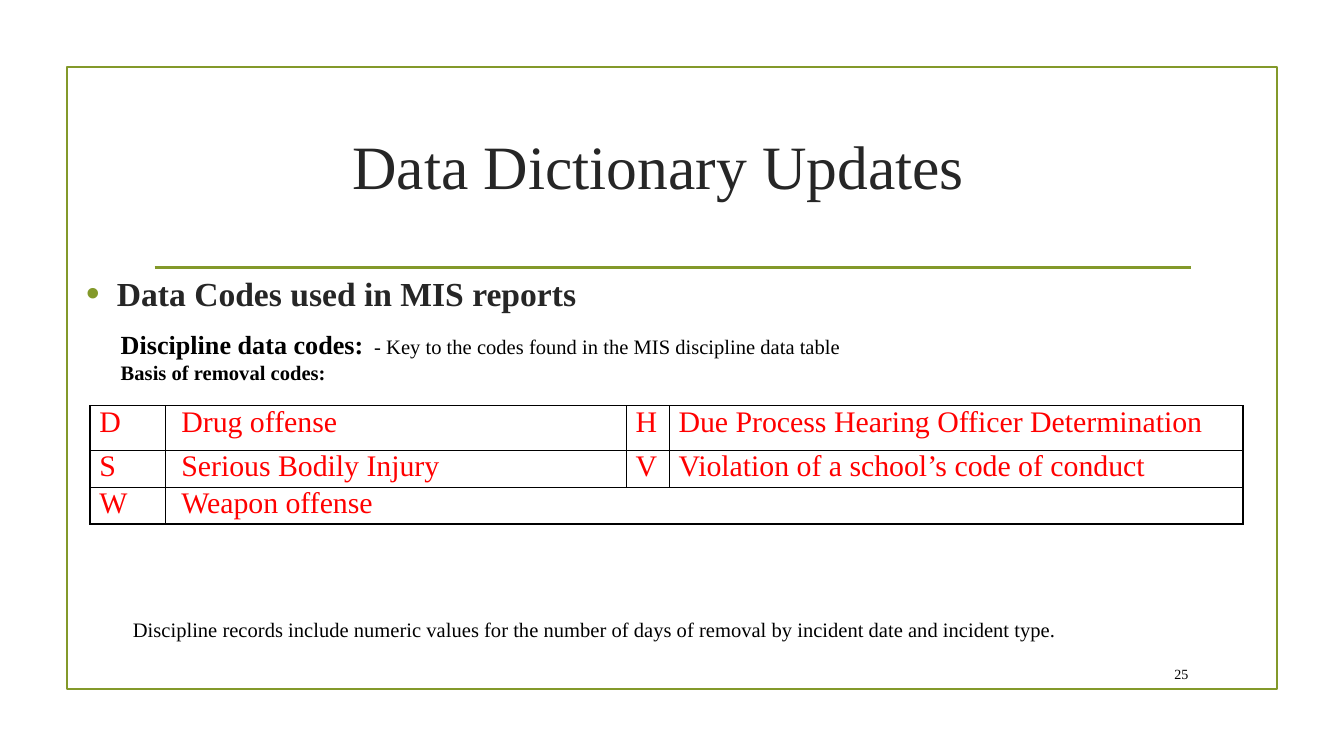
from lxml import etree
from pptx import Presentation
from pptx.dml.color import RGBColor
from pptx.enum.shapes import MSO_CONNECTOR, MSO_SHAPE
from pptx.enum.text import MSO_ANCHOR as Anchor, PP_ALIGN as Align
from pptx.oxml import parse_xml
from pptx.oxml.ns import nsdecls, qn
from pptx.util import Inches, Pt

GREEN = RGBColor(0x83, 0x99, 0x2A)
DARK = RGBColor(0x26, 0x26, 0x26)
BLACK = RGBColor(0, 0, 0)
RED = RGBColor(0xFF, 0, 0)
FONT = "Times New Roman"

SLIDE_WIDTH = 10
TABLE_HEIGHT = 0.88
FIRST_ROW_HEIGHT = 0.33
OTHER_ROW_HEIGHT = (TABLE_HEIGHT - FIRST_ROW_HEIGHT) / 2
ROW_HEIGHTS = [FIRST_ROW_HEIGHT, OTHER_ROW_HEIGHT, OTHER_ROW_HEIGHT]
COLUMN_WIDTHS = [0.56, 3.43, 0.32, 4.27]
CODES = [
    ["D", "Drug offense", "H", "Due Process Hearing Officer Determination"],
    ["S", "Serious Bodily Injury", "V", "Violation of a school’s code of conduct"],
    ["W", "Weapon offense"],
]


def place(shape, left, top, width, height):
    shape.left, shape.top = Inches(left), Inches(top)
    shape.width, shape.height = Inches(width), Inches(height)


def add_run(paragraph, text, size, color=BLACK, bold=False):
    run = paragraph.add_run()
    run.text = text
    font = run.font
    font.name, font.size, font.bold = FONT, Pt(size), bold
    font.color.rgb = color


def add_frame(slide):
    frame = slide.shapes.add_shape(
        MSO_SHAPE.RECTANGLE, Inches(0.5), Inches(0.5), Inches(9), Inches(4.63))
    frame.shadow.inherit = False
    frame.fill.background()
    frame.line.color.rgb = GREEN
    frame.line.width = Pt(1.25)


def add_rule(slide):
    rule = slide.shapes.add_connector(
        MSO_CONNECTOR.STRAIGHT, Inches(1.15), Inches(1.99), Inches(8.86), Inches(1.99))
    rule.line.color.rgb = GREEN
    rule.line.width = Pt(1.25)
    etree.SubElement(rule._element.spPr, qn("a:effectLst"))


def fill_title(title):
    place(title, 0.75, 0.73, 8.3, 0.99)
    title.text_frame.vertical_anchor = Anchor.MIDDLE
    paragraph = title.text_frame.paragraphs[0]
    paragraph.alignment = Align.CENTER
    add_run(paragraph, "Data Dictionary Updates", 33, DARK)


def fill_body(body):
    place(body, 0.54, 1.98, 8.96, 3.17)
    paragraph = body.text_frame.paragraphs[0]
    paragraph.space_before = Pt(0)
    paragraph.space_after = Pt(4.5)
    # Green round bullet with a hanging indent
    properties = paragraph._p.get_or_add_pPr()
    properties.set("marL", str(Inches(0.23)))
    properties.set("indent", str(-Inches(0.23)))
    for bullet in (
        f'<a:buClr {nsdecls("a")}><a:srgbClr val="{GREEN}"/></a:buClr>',
        f'<a:buSzPct {nsdecls("a")} val="115000"/>',
        f'<a:buFont {nsdecls("a")} typeface="Arial"/>',
        f'<a:buChar {nsdecls("a")} char="•"/>',
    ):
        properties.append(parse_xml(bullet))
    add_run(paragraph, "Data Codes used in MIS reports", 18, DARK, True)


def set_borders(cell):
    properties = cell._tc.get_or_add_tcPr()
    for side in ("lnL", "lnR", "lnT", "lnB"):
        properties.append(parse_xml(
            f'<a:{side} {nsdecls("a")} w="{Pt(0.75)}"><a:solidFill>'
            f'<a:srgbClr val="{BLACK}"/></a:solidFill></a:{side}>'))


def add_code_table(slide):
    table = slide.shapes.add_table(
        len(ROW_HEIGHTS), len(COLUMN_WIDTHS), Inches(0.67), Inches(3.02),
        Inches(sum(COLUMN_WIDTHS)), Inches(TABLE_HEIGHT)).table
    table.first_row = table.horz_banding = False
    for column, width in zip(table.columns, COLUMN_WIDTHS):
        column.width = Inches(width)
    for row, height in zip(table.rows, ROW_HEIGHTS):
        row.height = Inches(height)
    for cell in table.iter_cells():
        set_borders(cell)
        cell.fill.background()
        cell.margin_left = cell.margin_right = Inches(0.07)
        cell.margin_top = cell.margin_bottom = 0
    for row, texts in enumerate(CODES):
        for column, text in enumerate(texts):
            cell = table.cell(row, column)
            if column == 1:
                cell.margin_left = Inches(0.12)
            add_run(cell.text_frame.paragraphs[0], text, 16, RED)
    # The last description runs across the remaining columns
    table.cell(2, 1).merge(table.cell(2, 3))


def add_text(slide, box, paragraphs, alignment=Align.LEFT):
    """Each paragraph is a list of (text, size, bold) runs."""
    text_box = slide.shapes.add_textbox(*map(Inches, box))
    frame = text_box.text_frame
    frame.word_wrap = True
    frame.vertical_anchor = Anchor.MIDDLE
    for index, runs in enumerate(paragraphs):
        paragraph = frame.add_paragraph() if index else frame.paragraphs[0]
        paragraph.alignment = alignment
        for text, size, bold in runs:
            add_run(paragraph, text, size, bold=bold)


def main():
    presentation = Presentation()
    # Widescreen, 16 to 9
    presentation.slide_width = Inches(SLIDE_WIDTH)
    presentation.slide_height = Inches(SLIDE_WIDTH * 9 / 16)
    slide = presentation.slides.add_slide(presentation.slide_layouts[1])

    # Background decoration
    add_frame(slide)
    add_rule(slide)

    # Heading and list
    fill_title(slide.shapes.title)
    fill_body(slide.placeholders[1])

    # Codes and their explanations
    add_code_table(slide)
    add_text(slide, (0.8, 2.39, 8.25, 0.52), [
        [("Discipline data codes:", 14, True),
         ("  - Key to the codes found in the MIS discipline data table", 11, False)],
        [("Basis of removal codes:", 11, True)],
    ])
    add_text(slide, (0.89, 4.54, 8.25, 0.29), [
        [("Discipline records include numeric values for the number of days of "
          "removal by incident date and incident type.", 11, False)],
    ])

    # Page number
    add_text(slide, (8.49, 4.9, 0.45, 0.23), [[("25", 7.5, False)]], Align.RIGHT)

    presentation.save("out.pptx")


if __name__ == "__main__":
    main()
